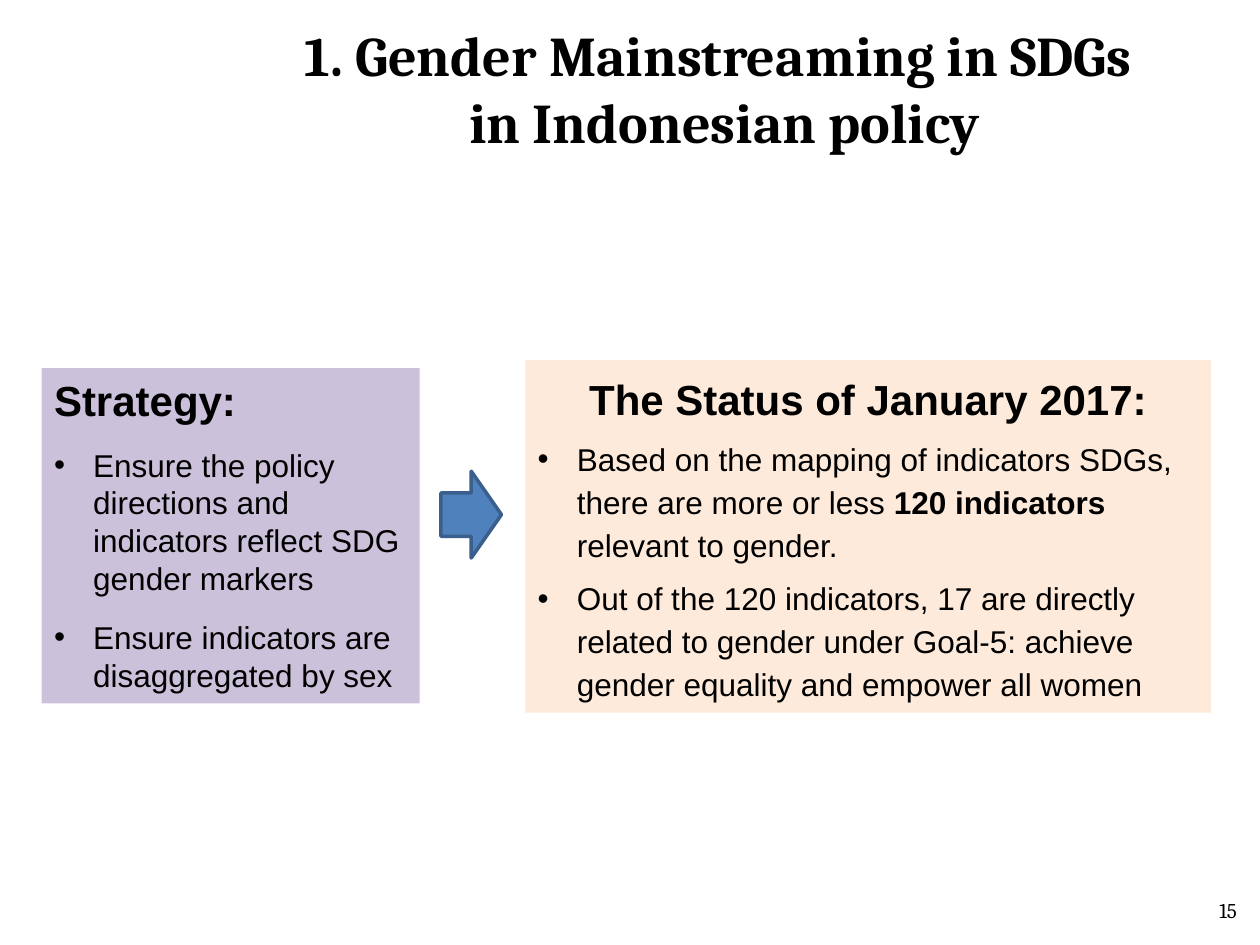
"""Build the slide on gender mainstreaming in Indonesian SDG policy."""
import dataclasses

import lxml.etree
import pptx
import pptx.dml.color
import pptx.enum.shapes
import pptx.enum.text
import pptx.oxml.ns
import pptx.util

Cm = pptx.util.Cm
Pt = pptx.util.Pt
RGB = pptx.dml.color.RGBColor.from_string
Align = pptx.enum.text.PP_ALIGN
Anchor = pptx.enum.text.MSO_ANCHOR
Shape = pptx.enum.shapes.MSO_SHAPE


@dataclasses.dataclass(frozen=True)
class Theme:
    ink: str = "000000"
    strategy: str = "CCC1DA"
    status: str = "FDEADA"
    arrow: str = "4F81BD"
    arrow_line: str = "3A5F8C"
    title_font: str = "Cambria"
    body_font: str = "Arial"
    title_size: int = 32
    heading_size: int = 24
    body_size: int = 18
    number_size: int = 12


theme = Theme()


def write(para, text, font=theme.body_font, size=theme.body_size, bold=False):
    span = para.add_run()
    span.text = text
    span.font.name = font
    span.font.size = Pt(size)
    span.font.bold = bold
    span.font.color.rgb = RGB(theme.ink)


def add_box(page, kind, place, fill=None):
    box = page.shapes.add_shape(kind, *(Cm(length) for length in place))
    box.shadow.inherit = False
    box.line.fill.background()
    if fill:
        box.fill.solid()
        box.fill.fore_color.rgb = RGB(fill)
    else:
        box.fill.background()
    return box


deck = pptx.Presentation()
deck.slide_width = Cm(25.4)
deck.slide_height = Cm(19.05)
page = deck.slides.add_slide(deck.slide_layouts[5])

title = page.shapes.title
title.left, title.top, title.width, title.height = Cm(4.88), Cm(-0.08), Cm(19.46), Cm(3.68)
title.text_frame.auto_size = pptx.enum.text.MSO_AUTO_SIZE.NONE
title.text_frame.vertical_anchor = Anchor.MIDDLE
para = title.text_frame.paragraphs[0]
para.alignment = Align.CENTER
title_format = dict(font=theme.title_font, size=theme.title_size, bold=True)
write(para, "1. Gender Mainstreaming in SDGs ", **title_format)
para.add_line_break()
write(para, "in Indonesian policy", **title_format)

panels = [
    dict(
        place=(10.59, 7.26, 13.82, 7.11), fill=theme.status,
        align=Align.CENTER, spacing=1.14, before=0,
        heading="The Status of January 2017:",
        bullets=[
            [("Based on the mapping of indicators SDGs, there are more or less ", False),
             ("120 indicators", True),
             (" relevant to gender.", False)],
            [("Out of the 120 indicators, 17 are directly related to gender under Goal-5: "
              "achieve gender equality and empower all women", False)],
        ],
    ),
    dict(
        place=(0.84, 7.42, 7.62, 6.76), fill=theme.strategy,
        align=Align.LEFT, spacing=1.0, before=6,
        heading="Strategy:",
        bullets=[
            [("Ensure the policy directions and indicators reflect SDG gender markers", False)],
            [("Ensure indicators are disaggregated by sex", False)],
        ],
    ),
]

for panel in panels:
    box = add_box(page, Shape.RECTANGLE, panel["place"], panel["fill"])
    frame = box.text_frame
    frame.word_wrap = True
    frame.vertical_anchor = Anchor.TOP
    para = frame.paragraphs[0]
    para.alignment = panel["align"]
    para.line_spacing = panel["spacing"]
    para.space_after = Pt(6)
    write(para, panel["heading"], size=theme.heading_size, bold=True)
    for bullet in panel["bullets"]:
        para = frame.add_paragraph()
        para.alignment = Align.LEFT
        para.line_spacing = panel["spacing"]
        para.space_before = Pt(panel["before"])
        para.space_after = Pt(6)
        properties = para._p.get_or_add_pPr()
        properties.set("marL", str(Cm(0.79)))
        properties.set("indent", str(Cm(-0.79)))
        qualified = pptx.oxml.ns.qn
        lxml.etree.SubElement(properties, qualified("a:buFont"), typeface=theme.body_font)
        lxml.etree.SubElement(properties, qualified("a:buChar"), char="•")
        for text, bold in bullet:
            write(para, text, bold=bold)

arrow = add_box(page, Shape.RIGHT_ARROW, (8.89, 9.5, 1.22, 1.75), theme.arrow)
arrow.line.color.rgb = RGB(theme.arrow_line)
arrow.line.width = Pt(2)

number = add_box(page, Shape.OVAL, (23.93, 17.63, 1.47, 1.42))
number.text_frame.word_wrap = True
number.text_frame.vertical_anchor = Anchor.MIDDLE
para = number.text_frame.paragraphs[0]
para.alignment = Align.RIGHT
write(para, "15", font=theme.title_font, size=theme.number_size)

deck.save("out.pptx")
